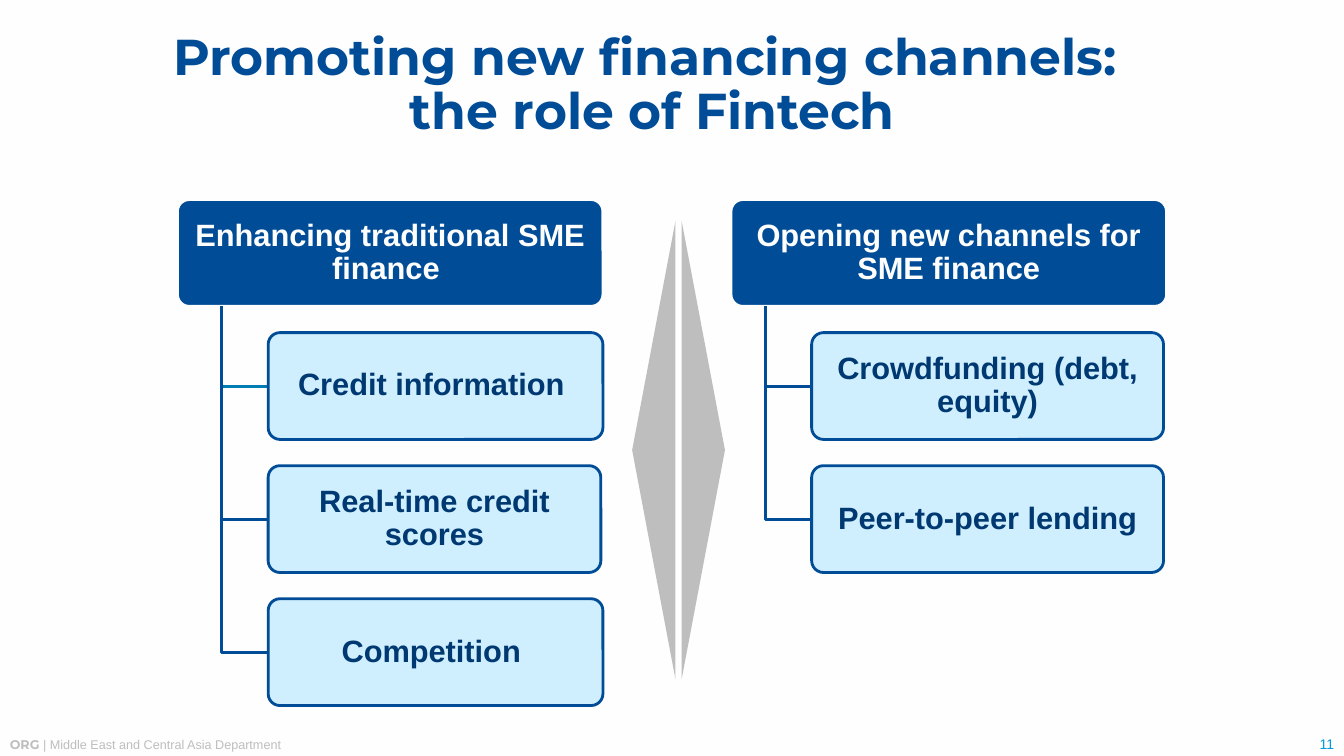
from lxml import etree
from pptx import Presentation, util as u
from pptx.dml.color import RGBColor
from pptx.enum import shapes as sh, text as tx
from pptx.oxml import ns

PX = 9144
BLUE = RGBColor(0x00, 0x4C, 0x97)
NAVY = RGBColor(0x00, 0x39, 0x71)
TEAL = RGBColor(0x00, 0x7D, 0xB2)
SKY = RGBColor(0x00, 0x9C, 0xDE)
PALE = RGBColor(0xCA, 0xED, 0xFE)
GREY = RGBColor(0xBE, 0xBE, 0xBE)
WHITE = RGBColor(0xFE, 0xFE, 0xFE)

TOP, TALL, STEP = 198, 106, 132
TREES = [
    (176, 422, 220, 266, "Enhancing traditional SME finance ",
     [("Credit information ", 332, TEAL),
      ("Real-time credit scores", 330, BLUE),
      ("Competition ", 332, BLUE)]),
    (725, 432, 759, 805, "Opening new channels for SME finance",
     [("Crowdfunding (debt, equity)", 349, BLUE),
      ("Peer-to-peer lending", 349, BLUE)]),
]


class Deck:
    """Holds the style and current slide, and draws each kind of element."""

    body, head = "Arial", "Montserrat"

    def __init__(self):
        self.prs = Presentation()
        self.prs.slide_width = 1333 * PX
        self.prs.slide_height = 750 * PX
        self.slide = self.prs.slides.add_slide(self.prs.slide_layouts[5])
        fill = self.slide.background.fill
        fill.solid()
        fill.fore_color.rgb = WHITE
        self.shapes = self.slide.shapes

    def font(self, run, size, color, bold=False, name=body):
        font = run.font
        font.name, font.size, font.bold = name, u.Pt(size), bold
        font.color.rgb = color

    def frame(self, shape, inset, align, anchor=tx.MSO_ANCHOR.MIDDLE):
        frame = shape.text_frame
        frame.word_wrap = True
        frame.vertical_anchor = anchor
        frame.margin_left = frame.margin_right = inset[0] * PX
        frame.margin_top = frame.margin_bottom = inset[1] * PX
        frame.paragraphs[0].alignment = align
        return frame

    def title(self, words):
        shape = self.shapes.title
        shape.left, shape.top = 44 * PX, 32 * PX
        shape.width, shape.height = 1206 * PX, 107 * PX
        shape.text_frame.text = words
        frame = self.frame(shape, (0, 0), tx.PP_ALIGN.CENTER)
        frame.auto_size = tx.MSO_AUTO_SIZE.NONE
        para = frame.paragraphs[0]
        para.line_spacing = 0.9
        for run in para.runs:
            self.font(run, 36, BLUE, True, self.head)

    def note(self, x, y, w, h, size, color, parts, align, anchor):
        box = self.shapes.add_textbox(x * PX, y * PX, w * PX, h * PX)
        para = self.frame(box, (10, 5), align, anchor).paragraphs[0]
        for words, name, bold in parts:
            run = para.add_run()
            run.text = words
            self.font(run, size, color, bold, name)

    def card(self, x, y, w, words, fill, line, color, inset, alpha=None):
        shape = self.shapes.add_shape(
            sh.MSO_SHAPE.ROUNDED_RECTANGLE, x * PX, y * PX, w * PX, TALL * PX)
        shape.adjustments[0] = 0.11
        shape.shadow.inherit = False
        shape.fill.solid()
        shape.fill.fore_color.rgb = fill
        if alpha:
            tone = shape.fill._xPr.find(".//" + ns.qn("a:srgbClr"))
            etree.SubElement(tone, ns.qn("a:alpha"), val=str(alpha * 1000))
        shape.line.color.rgb = line
        shape.line.width = u.Pt(2)
        shape.text_frame.text = words
        para = self.frame(shape, inset, tx.PP_ALIGN.CENTER).paragraphs[0]
        para.line_spacing = 0.9
        self.font(para.runs[0], 22, color, True)

    def elbow(self, x, y, right, low, color):
        path = self.shapes.build_freeform(x, y, scale=PX)
        path.add_line_segments([(x, low), (right, low)], close=False)
        shape = path.convert_to_shape()
        shape.shadow.inherit = False
        shape.fill.background()
        shape.line.color.rgb = color
        shape.line.width = u.Pt(2)

    def wedge(self, x, y, w, h, turn):
        shape = self.shapes.add_shape(
            sh.MSO_SHAPE.ISOSCELES_TRIANGLE, x * PX, y * PX, w * PX, h * PX)
        shape.rotation = turn
        shape.shadow.inherit = False
        shape.fill.solid()
        shape.fill.fore_color.rgb = GREY
        shape.line.fill.background()

    def tree(self, x, w, trunk, left, words, items):
        self.card(x, TOP, w, words, BLUE, WHITE, WHITE, (8, 6))
        for row, (label, wide, color) in enumerate(items, 1):
            y = TOP + row * STEP
            self.elbow(trunk, TOP + TALL, left, y + TALL // 2, color)
            self.card(left, y, wide, label, PALE, BLUE, NAVY, (10, 8), 90)


def main():
    deck = Deck()
    deck.title("Promoting new financing channels: \vthe role of Fintech")
    deck.note(0, 726, 1000, 25, 9, GREY,
              [("ORG ", deck.head, True),
               ("| Middle East and Central Asia Department", deck.body, False)],
              tx.PP_ALIGN.LEFT, tx.MSO_ANCHOR.TOP)
    deck.note(1201, 724, 132, 27, 10, SKY, [("11", deck.body, False)],
              tx.PP_ALIGN.RIGHT, tx.MSO_ANCHOR.BOTTOM)
    for tree in TREES:
        deck.tree(*tree)
    for x, turn in ((470, 90), (421, 270)):
        deck.wedge(x, 425, 455, 43, turn)
    deck.prs.save("out.pptx")


if __name__ == "__main__":
    main()
